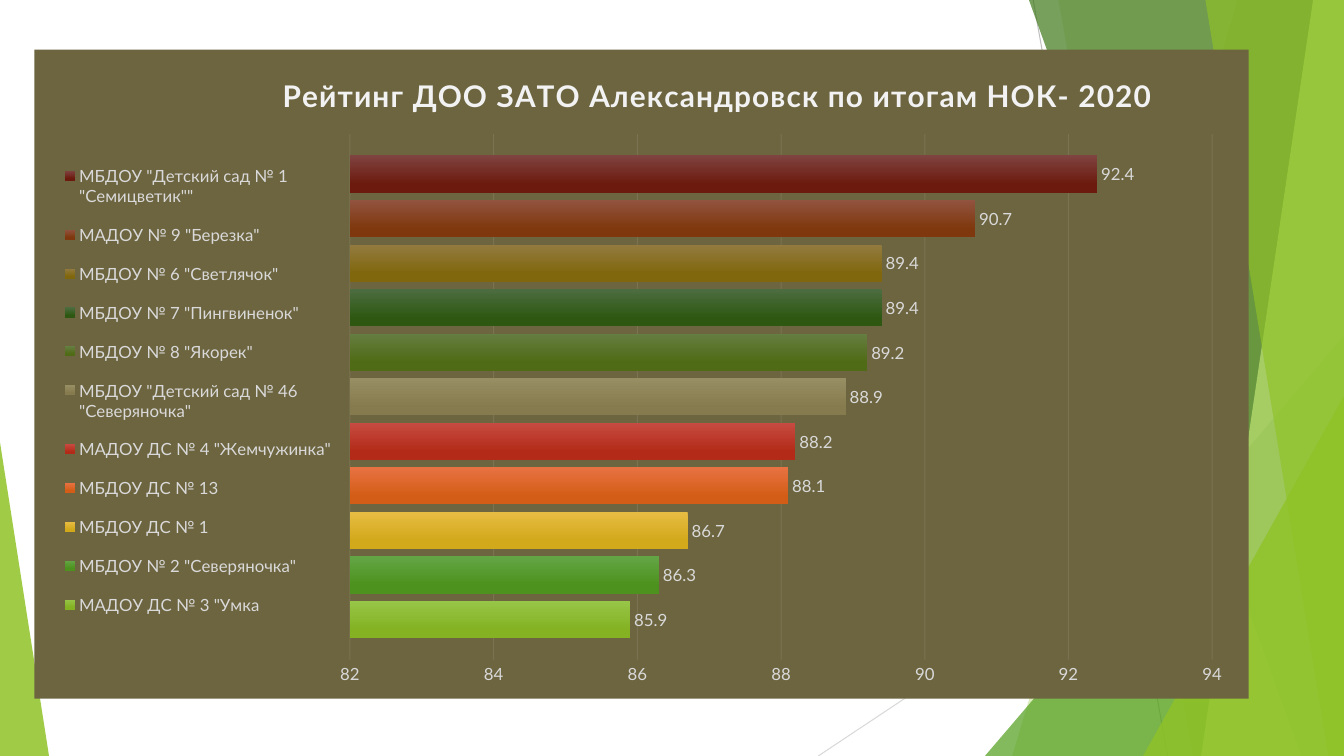
from lxml import etree
from pptx import Presentation
from pptx.chart.data import CategoryChartData
from pptx.dml.color import RGBColor
from pptx.enum.chart import XL_CHART_TYPE, XL_LABEL_POSITION, XL_LEGEND_POSITION, XL_TICK_MARK
from pptx.enum.shapes import MSO_CONNECTOR, MSO_SHAPE
from pptx.oxml import parse_xml
from pptx.oxml.ns import nsdecls, qn
from pptx.util import Pt

STRAIGHT = MSO_CONNECTOR.STRAIGHT
TRIANGLE = MSO_SHAPE.ISOSCELES_TRIANGLE
BAR = XL_CHART_TYPE.BAR_CLUSTERED
OUTSIDE_END = XL_LABEL_POSITION.OUTSIDE_END
LEFT = XL_LEGEND_POSITION.LEFT
NO_TICK = XL_TICK_MARK.NONE

FONT = "Lato"
WIDTH, HEIGHT = 960, 540
LIME = RGBColor(0x90, 0xC2, 0x26)
GREEN = RGBColor(0x54, 0xA0, 0x21)
DARK_GREEN = RGBColor(0x3F, 0x78, 0x19)
PALE_LIME = RGBColor(0xC0, 0xE4, 0x74)
GREY = RGBColor(0xBF, 0xBF, 0xBF)
LIGHT_GREY = RGBColor(0xD9, 0xD9, 0xD9)
OFF_WHITE = RGBColor(0xF2, 0xF2, 0xF2)
OLIVE = RGBColor(0x6D, 0x65, 0x40)

TITLE = "Рейтинг ДОО ЗАТО Александровск по итогам НОК- 2020"
# Name, score, upper and lower colour of the bar
RATINGS = [
    ('МАДОУ ДС № 3 "Умка', 85.9, RGBColor(0x97, 0xC5, 0x47), RGBColor(0x84, 0xB2, 0x23)),
    ('МБДОУ № 2 "Северяночка"', 86.3, RGBColor(0x63, 0xA5, 0x45), RGBColor(0x4D, 0x92, 0x1E)),
    ('МБДОУ ДС № 1', 86.7, RGBColor(0xE7, 0xBC, 0x43), RGBColor(0xD2, 0xA9, 0x1B)),
    ('МБДОУ ДС № 13', 88.1, RGBColor(0xE8, 0x72, 0x42), RGBColor(0xD3, 0x5D, 0x16)),
    ('МАДОУ ДС № 4 "Жемчужинка"', 88.2, RGBColor(0xC7, 0x4B, 0x42), RGBColor(0xB3, 0x2B, 0x18)),
    ('МБДОУ "Детский сад № 46 "Северяночка"', 88.9,
     RGBColor(0x98, 0x8E, 0x64), RGBColor(0x85, 0x7B, 0x4E)),
    ('МБДОУ № 8 "Якорек"', 89.2, RGBColor(0x65, 0x7E, 0x41), RGBColor(0x4F, 0x6B, 0x15)),
    ('МБДОУ № 7 "Пингвиненок"', 89.4, RGBColor(0x4D, 0x6D, 0x41), RGBColor(0x2E, 0x58, 0x12)),
    ('МБДОУ № 6 "Светлячок"', 89.4, RGBColor(0x93, 0x7B, 0x40), RGBColor(0x80, 0x67, 0x0E)),
    ('МАДОУ № 9 "Березка"', 90.7, RGBColor(0x92, 0x53, 0x40), RGBColor(0x7F, 0x38, 0x0D)),
    ('МБДОУ "Детский сад № 1 "Семицветик""', 92.4,
     RGBColor(0x7F, 0x43, 0x40), RGBColor(0x6C, 0x1A, 0x0E)),
]


def set_alpha(element, opacity):
    """Give every plain colour below the element an opacity in percent."""
    for color in element.iter(qn("a:srgbClr")):
        etree.SubElement(color, qn("a:alpha")).set("val", str(opacity * 1000))


def style_shape(shape, color, opacity):
    shape.shadow.inherit = False
    shape.fill.solid()
    shape.fill.fore_color.rgb = color
    shape.line.fill.background()
    set_alpha(shape.element.spPr, opacity)


def add_line(s, x1, y1, x2, y2, color):
    line = s.shapes.add_connector(STRAIGHT, Pt(x1), Pt(y1), Pt(x2), Pt(y2))
    line.line.color.rgb = color
    line.line.width = Pt(0.75)
    etree.SubElement(line.element.spPr, qn("a:effectLst"))


def add_band(s, top_x, bottom_x, color, opacity):
    """Fill the slide's right side from a slanted left edge."""
    builder = s.shapes.build_freeform(Pt(top_x), 0)
    corners = [(WIDTH, 0), (WIDTH, HEIGHT), (bottom_x, HEIGHT)]
    builder.add_line_segments([(Pt(x), Pt(y)) for x, y in corners], close=True)
    style_shape(builder.convert_to_shape(), color, opacity)


def add_triangle(s, left, top, width, apex, color, opacity):
    """Stand a triangle on the slide's bottom edge."""
    shape = s.shapes.add_shape(TRIANGLE, Pt(left), Pt(top), Pt(width), Pt(HEIGHT - top))
    shape.adjustments[0] = apex
    style_shape(shape, color, opacity)


def set_font(font, size, color, bold=False):
    font.name = FONT
    font.size = Pt(size)
    font.bold = bold
    font.color.rgb = color


def set_text(tf, text, size=12, color=LIGHT_GREY, bold=False, spacing=0):
    r = tf.paragraphs[0].add_run()
    r.text = text
    set_font(r.font, size, color, bold)
    r._r.get_or_add_rPr().set("spc", str(round(spacing * 100)))


def set_layout(chart, tag, index, x, y, w=None, h=None, inner=False):
    """Fix a chart part's place, in fractions of the chart's size."""
    element = chart.element.find(qn("c:chart")).find(qn(tag))
    for old in element.findall(qn("c:layout")):
        element.remove(old)
    layout = parse_xml(f"<c:layout {nsdecls('c')}><c:manualLayout/></c:layout>")
    settings = [("layoutTarget", "inner" if inner else None), ("xMode", "edge"),
                ("yMode", "edge"), ("x", x), ("y", y), ("w", w), ("h", h)]
    for name, value in settings:
        if value is not None:
            etree.SubElement(layout[0], qn(f"c:{name}")).set("val", str(value))
    element.insert(index, layout)


def fill_chart_area(chart, color):
    area = parse_xml(
        f"<c:spPr {nsdecls('c', 'a')}><a:solidFill><a:srgbClr val='{color}'/></a:solidFill>"
        "<a:ln><a:noFill/></a:ln></c:spPr>")
    chart.element.find(qn("c:chart")).addnext(area)


def style_series(series, top_color, bottom_color):
    fill = series.format.fill
    fill.gradient()
    fill.gradient_angle = 270
    for stop, position, color in zip(fill.gradient_stops, (0, 0.78), (top_color, bottom_color)):
        stop.position = position
        stop.color.rgb = color
    series.invert_if_negative = False
    labels = series.data_labels
    labels.show_value = True
    labels.position = OUTSIDE_END
    set_font(labels.font, 12, LIGHT_GREY)


def style_axes(chart):
    chart.category_axis.visible = False
    axis = chart.value_axis
    axis.minimum_scale, axis.maximum_scale, axis.major_unit = 82, 94, 2
    axis.major_tick_mark = axis.minor_tick_mark = NO_TICK
    axis.format.line.fill.background()
    set_font(axis.tick_labels.font, 12, LIGHT_GREY)
    grid = axis.major_gridlines
    grid.format.line.color.rgb = OFF_WHITE
    grid.format.line.width = Pt(0.75)
    set_alpha(chart.element.find(f".//{qn('c:majorGridlines')}"), 10)


def add_rating_chart(s):
    data = CategoryChartData()
    data.categories = ["1"]
    for name, score, _, _ in RATINGS:
        data.add_series(name, [score])
    frame = s.shapes.add_chart(BAR, Pt(24.5), Pt(35.5), Pt(867.5), Pt(463.5), data)
    chart = frame.chart
    set_font(chart.font, 10, LIGHT_GREY)
    fill_chart_area(chart, OLIVE)

    chart.has_title = True
    set_text(chart.chart_title.text_frame, TITLE, size=21.3, color=OFF_WHITE, bold=True, spacing=1)
    set_layout(chart, "c:title", 1, 0.2, 0.03)

    chart.has_legend = True
    chart.legend.position = LEFT
    chart.legend.include_in_layout = False
    set_font(chart.legend.font, 12, LIGHT_GREY)
    set_layout(chart, "c:legend", 1, 0.02, 0.15, 0.23, 0.75)

    plot = chart.plots[0]
    plot.gap_width = 115
    plot.overlap = -20
    plot.vary_by_categories = False
    for series, (_, _, top_color, bottom_color) in zip(plot.series, RATINGS):
        style_series(series, top_color, bottom_color)
    style_axes(chart)
    set_layout(chart, "c:plotArea", 0, 0.26, 0.13, 0.71, 0.81, inner=True)


def main():
    prs = Presentation()
    prs.slide_width, prs.slide_height = Pt(WIDTH), Pt(HEIGHT)
    s = prs.slides.add_slide(prs.slide_layouts[6])
    add_line(s, 738, 0, 834, HEIGHT, GREY)
    add_line(s, WIDTH, 290, 584.5, HEIGHT, LIGHT_GREY)
    add_band(s, 884, 723, LIME, 30)
    add_band(s, 756, 852, LIME, 20)
    add_triangle(s, 703.5, 240, 256.5, 1, GREEN, 72)
    add_band(s, 735, 929.5, DARK_GREEN, 70)
    add_band(s, 938, 858, PALE_LIME, 70)
    add_band(s, 861, 949, LIME, 65)
    add_triangle(s, 816.5, 283, 143.5, 1, LIME, 80)
    add_triangle(s, 0, 316, 35, 0, LIME, 85)
    add_rating_chart(s)
    prs.save("out.pptx")


if __name__ == "__main__":
    main()
